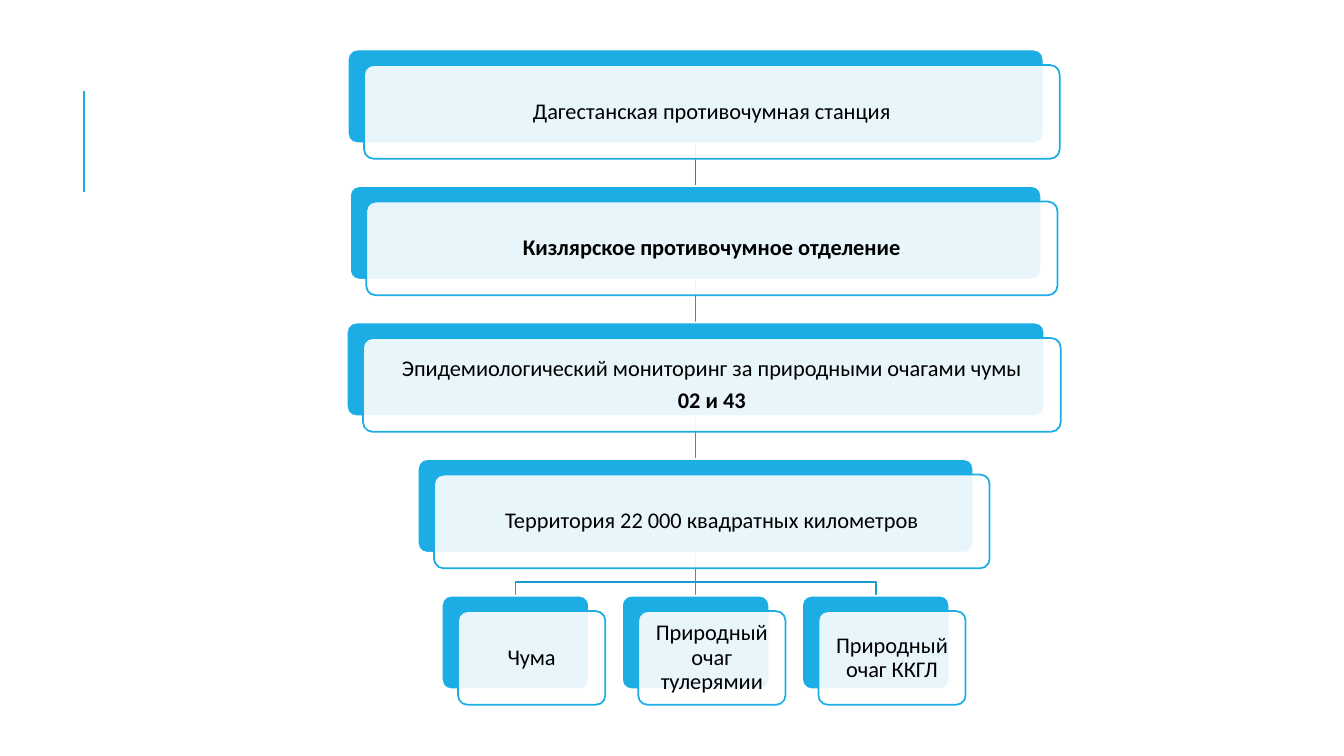
from lxml import etree
from pptx import Presentation
from pptx.dml.color import RGBColor
from pptx.enum.shapes import MSO_CONNECTOR as Connector, MSO_SHAPE as Preset
from pptx.enum.text import MSO_ANCHOR as Anchor, PP_ALIGN as Align
from pptx.oxml.ns import qn
from pptx.util import Cm, Pt

BLUE, LINK_BLUE, DARK_LINK_BLUE = "1CADE4", "199DCF", "168BB7"
WHITE, BLACK = "FFFFFF", "000000"
CENTER_X, FIRST_TOP, ROW_STEP = 17.53, 1.25, 3.44
BOX_HEIGHT, OFFSET_X, OFFSET_Y = 2.36, 0.41, 0.39
CHILD_WIDTH, CHILD_STEP, BEND_DROP = 3.71, 4.54, 0.74

LEVELS = [
    (17.53, [("Дагестанская противочумная станция", False)]),
    (17.42, [("Кизлярское противочумное отделение", True)]),
    (17.58, [("Эпидемиологический мониторинг за природными очагами чумы", False),
             ("02 и 43", True)]),
    (14.0, [("Территория 22 000 квадратных километров", False)]),
]
CHILDREN = ["Чума", "Природный очаг тулерямии", "Природный очаг ККГЛ"]


def color(value):
    return RGBColor.from_string(value)


def set_line(shape, value, width=1.25):
    shape.line.color.rgb = color(value)
    shape.line.width = Pt(width)


def add_line(slide, x, top, bottom, value, width=1.25):
    line = slide.shapes.add_connector(
        Connector.STRAIGHT, Cm(x), Cm(top), Cm(x), Cm(bottom))
    set_line(line, value, width)
    etree.SubElement(line._element.spPr, qn("a:effectLst"))


def add_elbow(slide, child_x, top, bottom):
    bend = top + BEND_DROP
    points = [(CENTER_X, bend), (child_x, bend), (child_x, bottom)]
    builder = slide.shapes.build_freeform(Cm(CENTER_X), Cm(top))
    builder.add_line_segments([(Cm(x), Cm(y)) for x, y in points], close=False)
    elbow = builder.convert_to_shape()
    elbow.shadow.inherit = False
    elbow.fill.background()
    set_line(elbow, LINK_BLUE)


def add_card(slide, left, top, width, fill, line):
    card = slide.shapes.add_shape(
        Preset.ROUNDED_RECTANGLE, Cm(left), Cm(top), Cm(width), Cm(BOX_HEIGHT))
    card.adjustments[0] = 0.1
    card.shadow.inherit = False
    card.fill.solid()
    card.fill.fore_color.rgb = color(fill)
    set_line(card, line)
    return card


def set_opacity(shape, percent):
    fill_color = shape._element.spPr.find(qn("a:solidFill")).find(qn("a:srgbClr"))
    etree.SubElement(fill_color, qn("a:alpha"), val=str(percent * 1000))


def write_text(shape, lines):
    frame = shape.text_frame
    frame.text = "\n".join(text for text, bold in lines)
    frame.word_wrap = True
    frame.vertical_anchor = Anchor.MIDDLE
    frame.margin_left = frame.margin_right = Cm(0.18)
    frame.margin_top = frame.margin_bottom = Cm(0.18)
    for paragraph, (text, bold) in zip(frame.paragraphs, lines):
        paragraph.alignment = Align.CENTER
        paragraph.line_spacing = 0.9
        paragraph.space_after = Pt(5.6)
        font = paragraph.runs[0].font
        font.name, font.size, font.bold = "Calibri", Pt(16), bold
        font.color.rgb = color(BLACK)


def add_node(slide, center_x, top, width, lines):
    left = center_x - width / 2
    add_card(slide, left, top, width, BLUE, WHITE)
    panel = add_card(slide, left + OFFSET_X, top + OFFSET_Y, width, WHITE, BLUE)
    set_opacity(panel, 90)
    write_text(panel, lines)


def main():
    presentation = Presentation()
    presentation.slide_width, presentation.slide_height = Cm(33.87), Cm(19.05)
    slide = presentation.slides.add_slide(presentation.slide_layouts[6])

    add_line(slide, 2.12, 2.29, 4.83, BLUE, 1.5)

    tops = [FIRST_TOP + ROW_STEP * row for row in range(len(LEVELS) + 1)]
    child_centers = [CENTER_X + CHILD_STEP * (index - 1)
                     for index in range(len(CHILDREN))]

    for child_x in (child_centers[0], child_centers[-1]):
        add_elbow(slide, child_x, tops[-2] + BOX_HEIGHT, tops[-1])
    for row, (top, next_top) in enumerate(zip(tops, tops[1:])):
        value = LINK_BLUE if row else DARK_LINK_BLUE
        add_line(slide, CENTER_X, top + BOX_HEIGHT, next_top, value)

    for top, (width, lines) in zip(tops, LEVELS):
        add_node(slide, CENTER_X, top, width, lines)
    for child_x, text in zip(child_centers, CHILDREN):
        add_node(slide, child_x, tops[-1], CHILD_WIDTH, [(text, False)])

    presentation.save("out.pptx")


if __name__ == "__main__":
    main()
